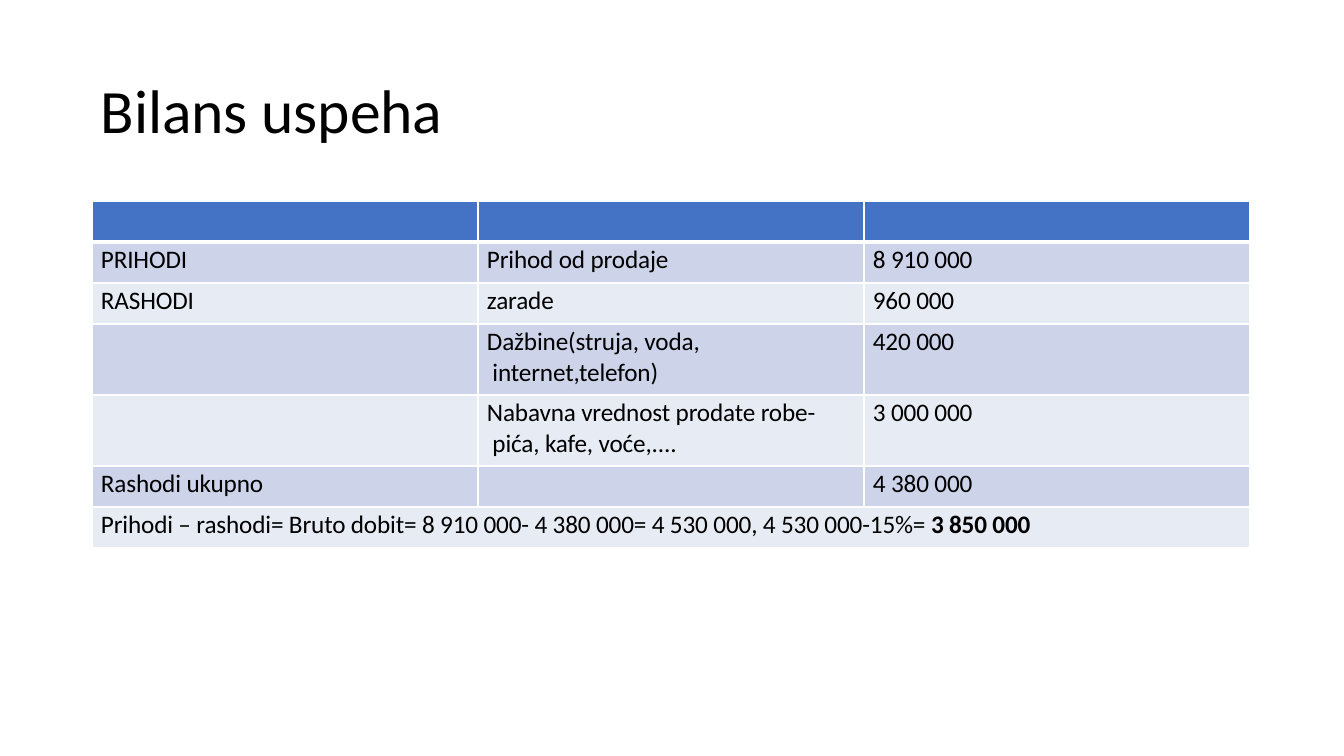
from lxml import etree
from pptx import Presentation
from pptx.dml.color import RGBColor
from pptx.enum.text import MSO_ANCHOR
from pptx.oxml.ns import qn
from pptx.util import Emu, Pt

PX = 914400 / 100.8
COLORS = {"text": "000000", "header": "4472C4", "band": "CDD4EA",
          "light": "E7EBF4", "border": "FFFFFF"}
FONT = "Calibri"
TRACKING = "-10"  # hundredths of a point

COLUMN_COUNT = 3
ROW_HEIGHTS = [41, 41, 41, 71, 71, 41, 41]
ROWS = [
    ["", "", ""],
    ["PRIHODI", "Prihod od prodaje", "8 910 000"],
    ["RASHODI", "zarade", "960 000"],
    ["", "Dažbine(struja, voda,\v internet,telefon)", "420 000"],
    ["", "Nabavna vrednost prodate robe-\v pića, kafe, voće,....", "3 000 000"],
    ["Rashodi ukupno", "", "4 380 000"],
]
PROFIT = "Prihodi – rashodi= Bruto dobit= 8 910 000- 4 380 000= 4 530 000, 4 530 000-15%= "
NET_PROFIT = "3 850 000"


def px(length):
    return Emu(round(length * PX))


def rgb(name):
    return RGBColor.from_string(COLORS[name])


def style_paragraph(paragraph, size, space_before):
    paragraph.font.name = FONT
    paragraph.font.size = Pt(size)
    paragraph.font.color.rgb = rgb("text")
    paragraph.space_before = Pt(space_before)
    for run in paragraph.runs:
        run.font._element.set("spc", TRACKING)


def set_borders(cell, top, bottom):
    properties = cell._tc.get_or_add_tcPr()
    widths = {"a:lnL": 1, "a:lnR": 1, "a:lnT": top, "a:lnB": bottom}
    for position, (tag, width) in enumerate(widths.items()):
        line = etree.Element(qn(tag), w=str(Pt(width)))
        fill = etree.SubElement(line, qn("a:solidFill"))
        etree.SubElement(fill, qn("a:srgbClr"), val=COLORS["border"])
        properties.insert(position, line)  # borders precede the fill


def add_title(slide, left, top, width, height):
    box = slide.shapes.add_textbox(px(left), px(top), px(width), px(height))
    frame = box.text_frame
    frame.word_wrap = False
    frame.margin_left = frame.margin_right = frame.margin_bottom = 0
    frame.margin_top = px(1)
    paragraph = frame.paragraphs[0]
    paragraph.text = "Bilans uspeha"
    style_paragraph(paragraph, 44, 1)


def add_income_table(slide, left, top, width, height):
    shape = slide.shapes.add_table(len(ROW_HEIGHTS), COLUMN_COUNT,
                                   px(left), px(top), px(width), px(height))
    table = shape.table
    for column in table.columns:
        column.width = px(width // COLUMN_COUNT)
    for row, row_height in zip(table.rows, ROW_HEIGHTS):
        row.height = px(row_height)

    # Entries
    for row, texts in zip(table.rows, ROWS):
        for cell, text in zip(row.cells, texts):
            cell.text = text

    # Closing profit line across all columns
    last = len(ROW_HEIGHTS) - 1
    profit_cell = table.cell(last, 0)
    profit_cell.merge(table.cell(last, COLUMN_COUNT - 1))
    paragraph = profit_cell.text_frame.paragraphs[0]
    paragraph.add_run().text = PROFIT
    net_run = paragraph.add_run()
    net_run.text = NET_PROFIT
    net_run.font.bold = True

    # Header, banding and borders
    for index, row in enumerate(table.rows):
        color = "header" if index == 0 else "band" if index % 2 else "light"
        for cell in row.cells:
            cell.margin_left = px(9)
            cell.margin_right = cell.margin_bottom = 0
            cell.margin_top = px(3)
            cell.vertical_anchor = MSO_ANCHOR.TOP
            cell.fill.solid()
            cell.fill.fore_color.rgb = rgb(color)
            set_borders(cell, 3 if index == 1 else 1, 3 if index == 0 else 1)
            style_paragraph(cell.text_frame.paragraphs[0], 18, 2.2)


def main():
    presentation = Presentation()
    presentation.slide_width, presentation.slide_height = px(1344), px(756)
    slide = presentation.slides.add_slide(presentation.slide_layouts[6])
    add_title(slide, 101, 71, 345, 77)
    add_income_table(slide, 92, 201, 1158, sum(ROW_HEIGHTS))
    presentation.save("out.pptx")


if __name__ == "__main__":
    main()
